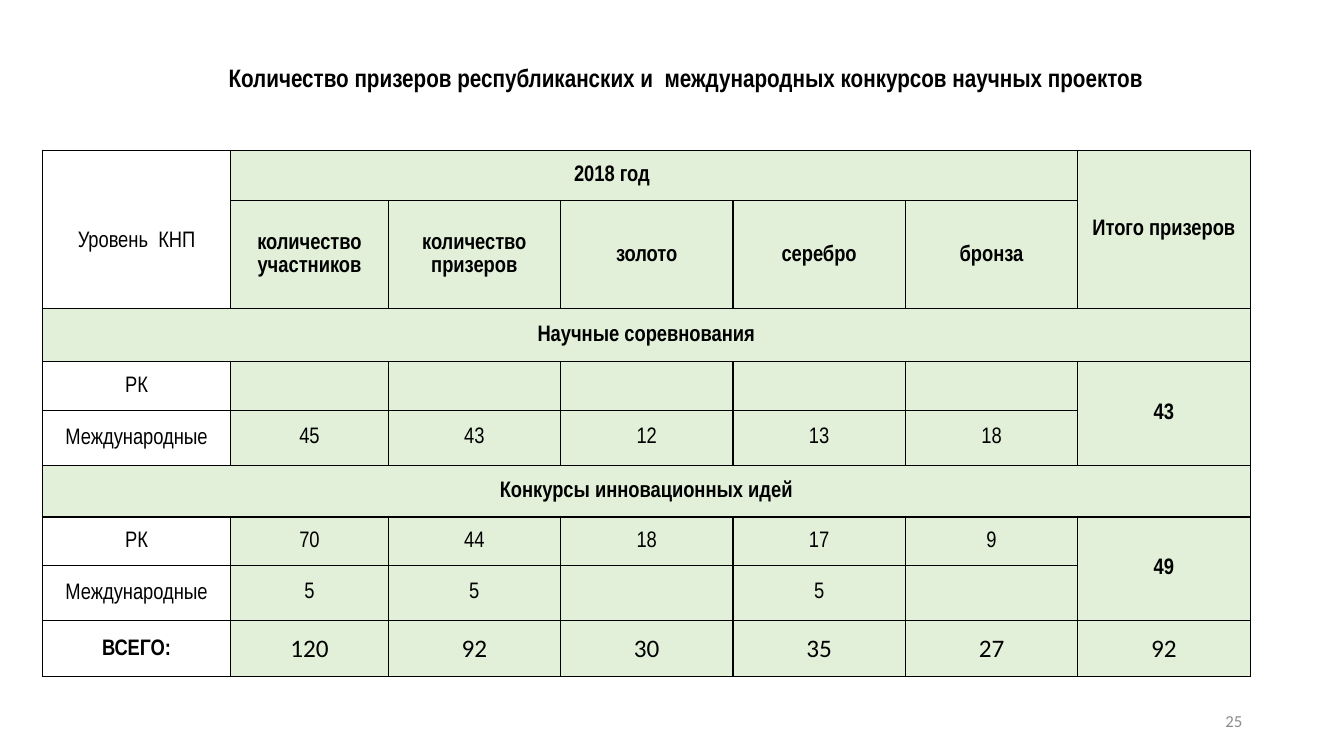
import dataclasses

import lxml.etree
import pptx
import pptx.dml.color
import pptx.enum.text
import pptx.oxml.ns
import pptx.util

Inches = pptx.util.Inches
Align = pptx.enum.text.PP_ALIGN
Anchor = pptx.enum.text.MSO_ANCHOR


@dataclasses.dataclass(frozen=True)
class Theme:
    text: str = "000000"
    muted: str = "8C8C8C"
    green: str = "E2F0D9"
    narrow: str = "Arial Narrow"
    plain: str = "Calibri"
    title_size: int = 18
    table_size: int = 16
    total_size: int = 18
    number_size: int = 12
    border_width: int = 1


THEME = Theme()

COLUMNS = [1.87, 1.56] + [1.71] * 5
HEIGHTS = [0.5, 1.07, 0.53, 0.48, 0.55, 0.51, 0.48, 0.55, 0.55]
ROWS = [
    ["Уровень  КНП", "2018 год", "", "", "", "", "Итого призеров"],
    ["", "количество участников", "количество призеров", "золото", "серебро", "бронза", ""],
    ["Научные соревнования", "", "", "", "", "", ""],
    ["РК", "", "", "", "", "", "43"],
    ["Международные", "45", "43", "12", "13", "18", ""],
    ["Конкурсы инновационных идей", "", "", "", "", "", ""],
    ["РК", "70", "44", "18", "17", "9", "49"],
    ["Международные", "5", "5", "", "5", "", ""],
    ["ВСЕГО:", "120", "92", "30", "35", "27", "92"],
]
# First and last cell of each merged block, as (row, column)
MERGES = [
    ((0, 0), (1, 0)), ((0, 1), (0, 5)), ((0, 6), (1, 6)),
    ((2, 0), (2, 6)), ((3, 6), (4, 6)),
    ((5, 0), (5, 6)), ((6, 6), (7, 6)),
]
SECTION_ROWS = (2, 5)
TOTAL_ROW = len(ROWS) - 1


def style_font(font, name, size, color, bold=False):
    font.name = name
    font.size = pptx.util.Pt(size)
    font.bold = bold
    font.color.rgb = pptx.dml.color.RGBColor.from_string(color)


def add_text(page, box, text, align, anchor, name, size, color, bold=False):
    frame = page.shapes.add_textbox(*map(Inches, box)).text_frame
    frame.word_wrap = True
    frame.vertical_anchor = anchor
    frame.text = text
    para = frame.paragraphs[0]
    para.alignment = align
    style_font(para.runs[0].font, name, size, color, bold)


def add_borders(cell):
    properties = cell._tc.get_or_add_tcPr()
    qualified = pptx.oxml.ns.qn
    for side in ("lnL", "lnR", "lnT", "lnB"):
        line = lxml.etree.SubElement(properties, qualified("a:" + side))
        line.set("w", str(pptx.util.Pt(THEME.border_width)))
        fill = lxml.etree.SubElement(line, qualified("a:solidFill"))
        lxml.etree.SubElement(fill, qualified("a:srgbClr")).set("val", THEME.text)


def is_bold(row, column):
    if row == TOTAL_ROW:
        return column == 0
    if row in SECTION_ROWS or column == 6:
        return True
    return row < 2 and column > 0


def style_cell(cell, row, column, text):
    add_borders(cell)
    if column == 0 and row not in SECTION_ROWS:
        cell.fill.background()
    else:
        cell.fill.solid()
        cell.fill.fore_color.rgb = pptx.dml.color.RGBColor.from_string(THEME.green)
    cell.vertical_anchor = Anchor.MIDDLE
    cell.margin_left = cell.margin_right = Inches(0.02)
    cell.margin_top = cell.margin_bottom = 0

    cell.text_frame.text = text
    para = cell.text_frame.paragraphs[0]
    para.alignment = Align.CENTER
    if not text.isdigit():
        para.line_spacing = 1.07
    if row == TOTAL_ROW and column > 0:
        name, size = THEME.plain, THEME.total_size
    else:
        name, size = THEME.narrow, THEME.table_size
    style_font(para.font, name, size, THEME.text)
    for span in para.runs:
        style_font(span.font, name, size, THEME.text, is_bold(row, column))


def add_results_table(page, box):
    frame = page.shapes.add_table(len(ROWS), len(COLUMNS), *map(Inches, box))
    table = frame.table
    table.first_row = table.horz_banding = False
    for column, width in zip(table.columns, COLUMNS):
        column.width = Inches(width)
    for row, height in zip(table.rows, HEIGHTS):
        row.height = Inches(height)

    for row, texts in enumerate(ROWS):
        for column, text in enumerate(texts):
            style_cell(table.cell(row, column), row, column, text)
    for first, last in MERGES:
        table.cell(*first).merge(table.cell(*last))

    # The level label sits below the middle, the year left of it
    table.cell(0, 0).margin_top = Inches(0.24)
    table.cell(0, 1).margin_right = Inches(0.86)


def build_results_page(page, width, height):
    add_text(page, (0.92, 0.57, width - 1.56, 0.4),
             "Количество призеров республиканских и  международных конкурсов научных проектов",
             Align.CENTER, Anchor.TOP, THEME.narrow, THEME.title_size, THEME.text, True)
    add_results_table(page, (0.42, 1.49, sum(COLUMNS), sum(HEIGHTS)))
    add_text(page, (width - 3.91, height - 0.55, 3, 0.4), "25",
             Align.RIGHT, Anchor.MIDDLE, THEME.plain, THEME.number_size, THEME.muted)


def main():
    width, height = 13.33, 7.5
    deck = pptx.Presentation()
    deck.slide_width, deck.slide_height = Inches(width), Inches(height)
    page = deck.slides.add_slide(deck.slide_layouts[6])
    build_results_page(page, width, height)
    deck.save("out.pptx")


if __name__ == "__main__":
    main()
